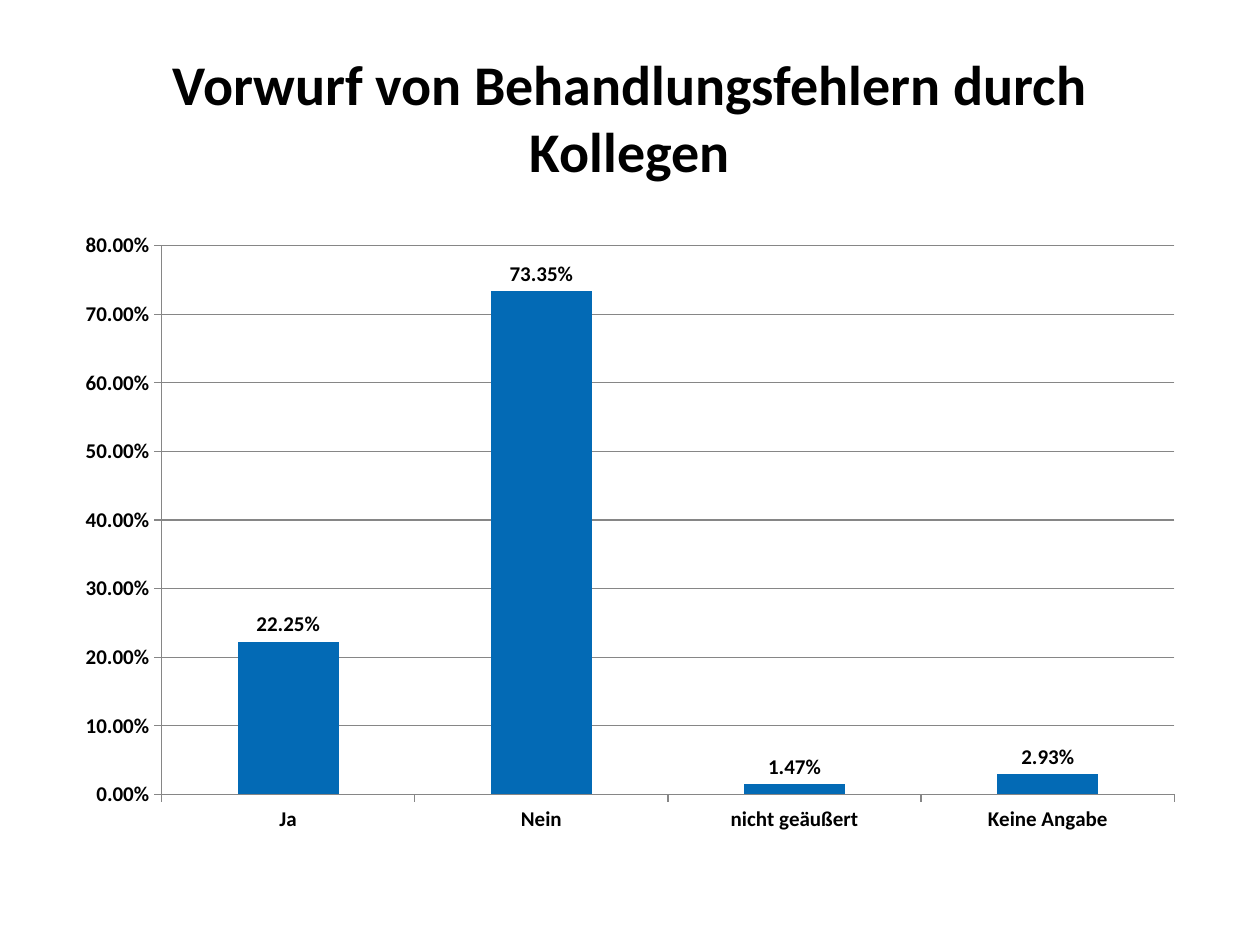
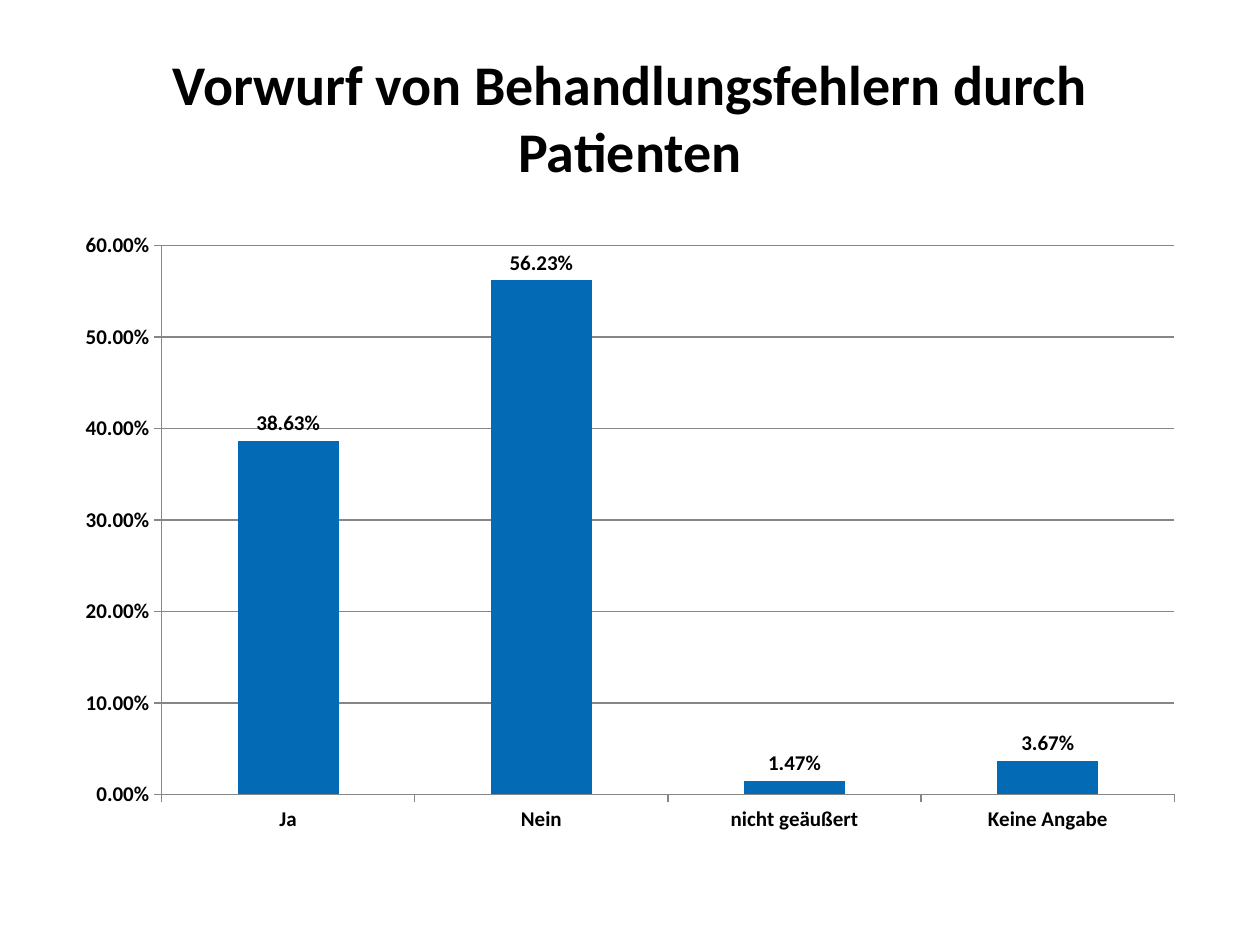
from pptx import Presentation
from pptx.chart.data import CategoryChartData
from pptx.dml.color import RGBColor
from pptx.enum.chart import XL_CHART_TYPE as ChartType
from pptx.enum.chart import XL_LABEL_POSITION as LabelPosition
from pptx.enum.chart import XL_TICK_MARK as TickMark
from pptx.enum.text import MSO_ANCHOR as Anchor
from pptx.enum.text import PP_ALIGN as Align
from pptx.util import Cm, Pt

BLACK = RGBColor(0x00, 0x00, 0x00)
BLUE = RGBColor(0x03, 0x6A, 0xB5)
GRAY = RGBColor(0x86, 0x86, 0x86)
FONT = "Calibri"
PERCENT = "0.00%"

# Shared frame of both slides
LEFT, WIDTH = Cm(1.27), Cm(22.86)
TITLE_TOP, TITLE_HEIGHT = Cm(0.76), Cm(3.18)
CHART_TOP, CHART_HEIGHT = Cm(4.45), Cm(12.57)

# Survey results: who accuses, share per answer, top of the scale
ANSWERS = ["Ja", "Nein", "nicht geäußert", "Keine Angabe"]
SURVEYS = [
    ("Kollegen", [0.2225, 0.7335, 0.0147, 0.0293], 0.8),
    ("Patienten", [0.3863, 0.5623, 0.0147, 0.0367], 0.6),
]


def set_font(font, size):
    font.name = FONT
    font.size = Pt(size)
    font.bold = True
    font.color.rgb = BLACK


prs = Presentation()
prs.slide_width, prs.slide_height = Cm(25.4), Cm(19.05)

for accuser, shares, scale_top in SURVEYS:
    slide = prs.slides.add_slide(prs.slide_layouts[6])

    # Title
    title = slide.shapes.add_textbox(LEFT, TITLE_TOP, WIDTH, TITLE_HEIGHT).text_frame
    title.word_wrap = True
    title.vertical_anchor = Anchor.MIDDLE
    heading = title.paragraphs[0]
    heading.text = f"Vorwurf von Behandlungsfehlern durch {accuser}"
    heading.alignment = Align.CENTER
    set_font(heading.font, 32)

    # Column chart
    answer_data = CategoryChartData(number_format=PERCENT)
    answer_data.categories = ANSWERS
    answer_data.add_series("Series 1", shares)
    chart = slide.shapes.add_chart(
        ChartType.COLUMN_CLUSTERED, LEFT, CHART_TOP, WIDTH, CHART_HEIGHT, answer_data
    ).chart
    chart.has_title = False
    chart.has_legend = False
    set_font(chart.font, 12)

    # Columns and their labels
    columns = chart.plots[0]
    columns.gap_width = 150
    columns.vary_by_categories = False
    fill = columns.series[0].format.fill
    fill.solid()
    fill.fore_color.rgb = BLUE
    columns.has_data_labels = True
    labels = columns.data_labels
    labels.show_value = True
    labels.number_format = PERCENT
    labels.number_format_is_linked = False
    labels.position = LabelPosition.OUTSIDE_END
    set_font(labels.font, 12)

    # Axes and gridlines
    share_axis = chart.value_axis
    share_axis.minimum_scale = 0
    share_axis.maximum_scale = scale_top
    share_axis.major_unit = 0.1
    share_axis.has_major_gridlines = True
    share_axis.tick_labels.number_format = PERCENT
    share_axis.tick_labels.number_format_is_linked = False
    for axis in (chart.category_axis, share_axis):
        axis.major_tick_mark = TickMark.OUTSIDE
        axis.minor_tick_mark = TickMark.NONE
    for ruled in (chart.category_axis, share_axis, share_axis.major_gridlines):
        ruled.format.line.color.rgb = GRAY
        ruled.format.line.width = Pt(0.75)

prs.save("out.pptx")
